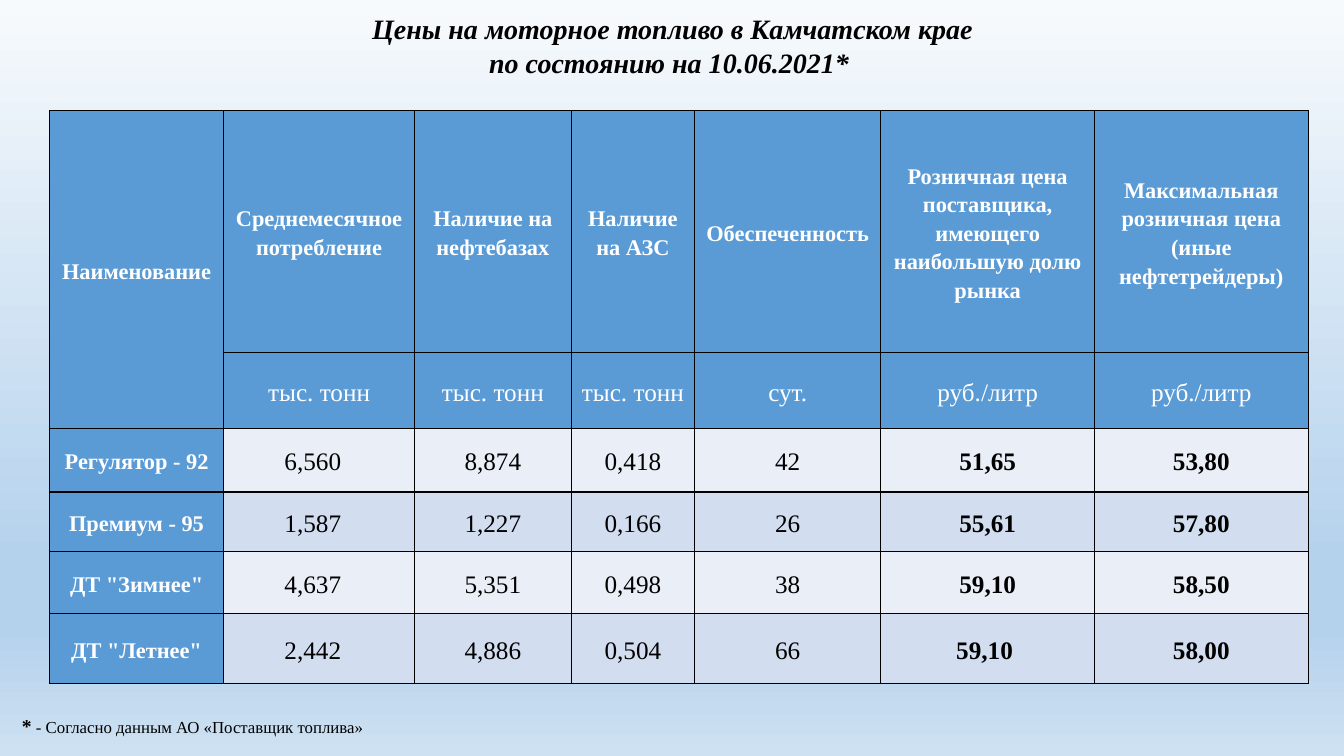
from lxml.etree import SubElement
from pptx import Presentation
from pptx.dml.color import RGBColor
from pptx.enum.text import MSO_ANCHOR, PP_ALIGN
from pptx.oxml import parse_xml
from pptx.oxml.ns import nsdecls, qn
from pptx.util import Pt

FONT = "Times New Roman"
BLACK, WHITE, BLUE = "000000", "FFFFFF", "5B9BD5"
BANDS = ["EAEFF7", "D2DEEF"]
BACKGROUND = [(0, "F7FAFD"), (74, "B5D2EC"), (83, "B5D2EC"), (100, "CEE1F2")]
COLUMN_WIDTHS = [124.6, 136.1, 112.2, 87.9, 133.2, 152.6, 152.6]
ROW_HEIGHTS = [172.8, 54, 45.4, 42.5, 44.6, 49.7]
TITLE = {"size": 20, "bold": True, "italic": True}
HEADING = {"size": 16, "bold": True, "color": WHITE}
UNIT = {"size": 18, "color": WHITE}
VALUE = {"size": 18}
PRICE = {"size": 18, "bold": True}
ROWS = [
    ["Наименование", "Среднемесячное потребление", "Наличие на нефтебазах",
     "Наличие на АЗС", "Обеспеченность",
     "Розничная цена поставщика, имеющего наибольшую долю рынка",
     "Максимальная розничная цена\n(иные нефтетрейдеры)"],
    ["", "тыс. тонн", "тыс. тонн", "тыс. тонн", "сут.", "руб./литр", "руб./литр"],
    ["Регулятор - 92", "6,560", "8,874", "0,418", "42", "51,65", "53,80"],
    ["Премиум - 95", "1,587", "1,227", "0,166", "26", "55,61", "57,80"],
    ["ДТ \"Зимнее\"", "4,637", "5,351", "0,498", "38", "59,10", "58,50"],
    ["ДТ \"Летнее\"", "2,442", "4,886", "0,504", "66", "59,10 ", "58,00"],
]


def rgb(value):
    """Turn a hex string into a colour."""
    return RGBColor.from_string(value)


def set_attributes(target, values):
    """Set every named attribute on the target."""
    for name, value in values.items():
        setattr(target, name, value)


def add_span(para, text, size, color=BLACK, bold=False, italic=False):
    """Add one formatted run to a paragraph."""
    span = para.add_run()
    span.text = text
    set_attributes(span.font, {"name": FONT, "size": Pt(size),
                               "bold": bold, "italic": italic})
    span.font.color.rgb = rgb(color)


def write_paragraphs(frame, paragraphs, align, spacing=None):
    """Fill a text frame with paragraphs, each a list of (text, style)."""
    for index, spans in enumerate(paragraphs):
        para = frame.add_paragraph() if index else frame.paragraphs[0]
        set_attributes(para, {"alignment": align, "line_spacing": spacing})
        for text, style in spans:
            add_span(para, text, **style)


def add_text(page, left, top, width, height, paragraphs, align):
    """Add a wrapping text box."""
    box = page.shapes.add_textbox(Pt(left), Pt(top), Pt(width), Pt(height))
    box.text_frame.word_wrap = True
    write_paragraphs(box.text_frame, paragraphs, align)


def paint_background(page):
    """Give the page its vertical gradient."""
    fill = page.background.fill
    fill.gradient()
    fill.gradient_angle = 270
    stops = page.element.find(".//" + qn("a:gsLst"))
    for stop in list(stops):
        stops.remove(stop)
    for position, color in BACKGROUND:
        stop = SubElement(stops, qn("a:gs"), pos=str(position * 1000))
        SubElement(stop, qn("a:srgbClr"), val=color)


def add_borders(cell):
    """Draw a one-point black line on all four sides of a cell."""
    properties = cell._tc.get_or_add_tcPr()
    for index, side in enumerate(["lnL", "lnR", "lnT", "lnB"]):
        line = parse_xml(
            f'<a:{side} {nsdecls("a")} w="{Pt(1)}"><a:solidFill>'
            f'<a:srgbClr val="{BLACK}"/></a:solidFill></a:{side}>')
        properties.insert(index, line)


def cell_style(row, column):
    """Choose the text style for a table position."""
    if row == 0 or column == 0:
        return HEADING
    if row == 1:
        return UNIT
    return PRICE if column >= 5 else VALUE


def fill_cell(cell, row, column, text):
    """Write and format one table cell."""
    is_body = row > 1 and column > 0
    right = 14 if is_body and column == 1 else 5
    set_attributes(cell, {"vertical_anchor": MSO_ANCHOR.MIDDLE,
                          "margin_left": Pt(5), "margin_right": Pt(right),
                          "margin_top": 0, "margin_bottom": 0})
    cell.fill.solid()
    cell.fill.fore_color.rgb = rgb(BANDS[row % 2] if is_body else BLUE)
    add_borders(cell)
    if text:
        style = cell_style(row, column)
        paragraphs = [[(line, style)] for line in text.split("\n")]
        write_paragraphs(cell.text_frame, paragraphs, PP_ALIGN.CENTER, 1.15)


def add_price_table(page):
    """Add the fuel price table."""
    table = page.shapes.add_table(
        len(ROWS), len(COLUMN_WIDTHS), Pt(35.3), Pt(79.2),
        Pt(sum(COLUMN_WIDTHS)), Pt(sum(ROW_HEIGHTS))).table
    for column, width in zip(table.columns, COLUMN_WIDTHS):
        column.width = Pt(width)
    for row, height in zip(table.rows, ROW_HEIGHTS):
        row.height = Pt(height)
    for row, texts in enumerate(ROWS):
        for column, text in enumerate(texts):
            fill_cell(table.cell(row, column), row, column, text)
    table.cell(0, 0).merge(table.cell(1, 0))


def main():
    """Build and save the deck."""
    deck = Presentation()
    set_attributes(deck, {"slide_width": Pt(960), "slide_height": Pt(540)})
    page = deck.slides.add_slide(deck.slide_layouts[6])
    paint_background(page)
    add_price_table(page)
    add_text(page, 95, 5, 771, 55.7,
             [[("Цены на моторное топливо в Камчатском крае", TITLE)],
              [("по состоянию на 10.06.2021* ", TITLE)]], PP_ALIGN.CENTER)
    add_text(page, 8.6, 506.2, 430.6, 24.5,
             [[("*", {"size": 14, "bold": True}),
               (" - Согласно данным АО «Поставщик топлива»", {"size": 12})]],
             PP_ALIGN.LEFT)
    deck.save("out.pptx")


if __name__ == "__main__":
    main()
